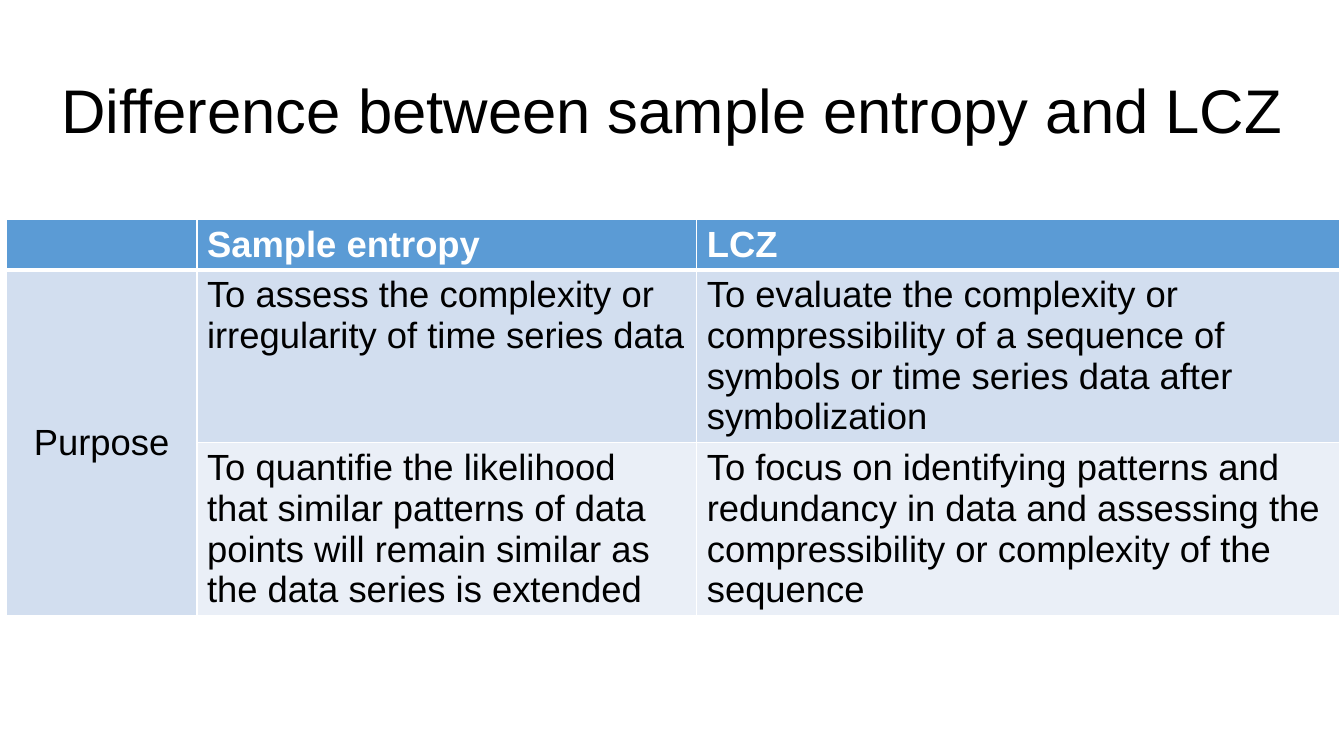
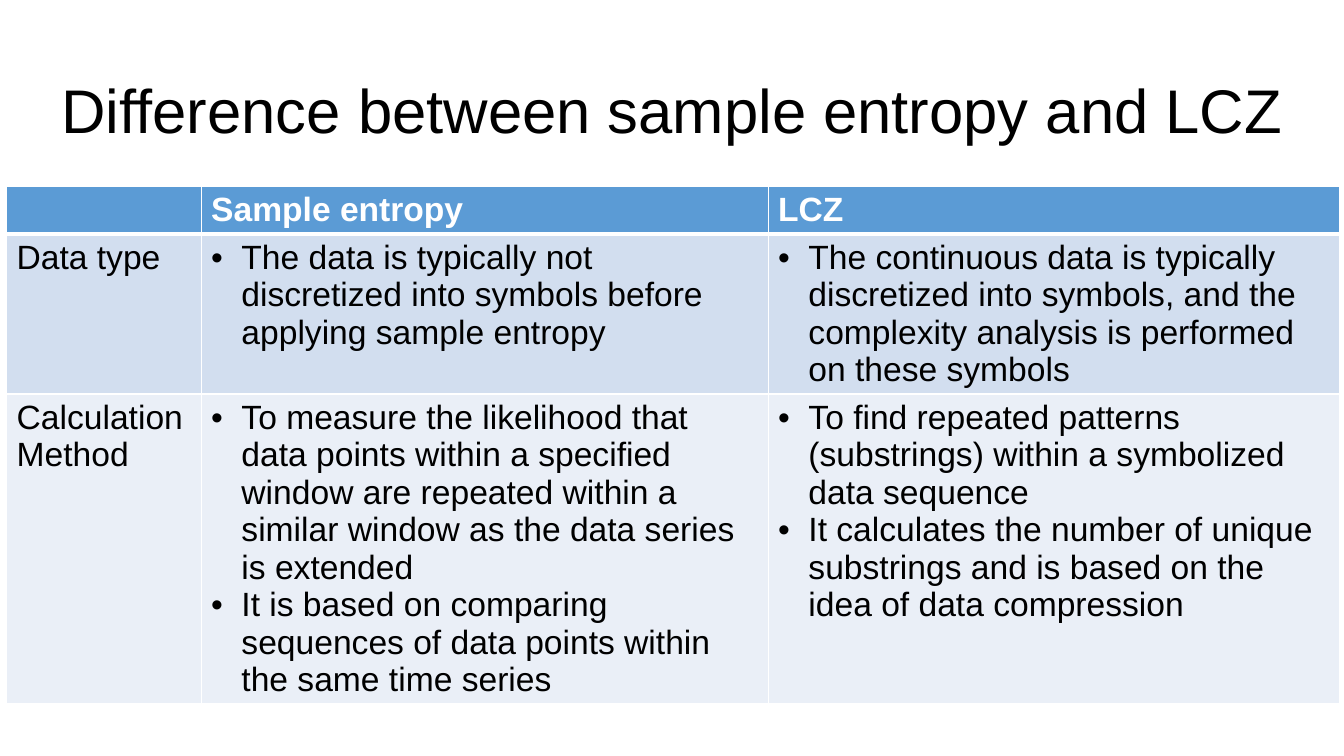
import lxml.etree
import pptx
import pptx.dml.color
import pptx.enum.text
import pptx.oxml.ns
import pptx.util

Pt = pptx.util.Pt
RGB = pptx.dml.color.RGBColor
ANCHOR = pptx.enum.text.MSO_ANCHOR
ALIGN = pptx.enum.text.PP_ALIGN
qn = pptx.oxml.ns.qn

COLORS = {
    "header": "5B9BD5",
    "odd_row": "D2DEEF",
    "even_row": "EAEFF7",
    "light": "FFFFFF",
    "ink": "000000",
}
FONT = "Arial"
TITLE = "Difference between sample entropy and LCZ"
HEADINGS = [[""], ["Sample entropy"], ["LCZ"]]
TABLE_LEFT = 4.7
BULLET_INDENT = 21.6

PURPOSE = [
    HEADINGS,
    [
        ["Purpose"],
        ["To assess the complexity or irregularity of time series data"],
        ["To evaluate the complexity or compressibility of a sequence of symbols "
         "or time series data after symbolization"],
    ],
    [
        [""],
        ["To quantifie the likelihood that similar patterns of data points will "
         "remain similar as the data series is extended"],
        ["To focus on identifying patterns and redundancy in data and assessing "
         "the compressibility or complexity of the sequence"],
    ],
]

METHOD = [
    HEADINGS,
    [
        ["Data type"],
        ["The data is typically not discretized into symbols before applying "
         "sample entropy"],
        ["The continuous data is typically discretized into symbols, and the "
         "complexity analysis is performed on these symbols"],
    ],
    [
        ["Calculation Method"],
        ["To measure the likelihood that data points within a specified window "
         "are repeated within a similar window as the data series is extended",
         "It is based on comparing sequences of data points within the same "
         "time series"],
        ["To find repeated patterns (substrings) within a symbolized data sequence",
         "It calculates the number of unique substrings and is based on the idea "
         "of data compression"],
    ],
]


def add_run(paragraph, text, size, color, bold=False):
    """Append one formatted run to a paragraph."""
    run = paragraph.add_run()
    run.text = text
    run.font.name = FONT
    run.font.size = Pt(size)
    run.font.bold = bold
    run.font.color.rgb = RGB.from_string(COLORS[color])


def add_bullet(paragraph):
    """Give a paragraph a round bullet with a hanging indent."""
    properties = paragraph._p.get_or_add_pPr()
    properties.set("marL", str(Pt(BULLET_INDENT)))
    properties.set("indent", str(-Pt(BULLET_INDENT)))
    lxml.etree.SubElement(properties, qn("a:buFont")).set("typeface", FONT)
    lxml.etree.SubElement(properties, qn("a:buChar")).set("char", "•")


def set_borders(cell, top, bottom):
    """Draw white cell borders with the given top and bottom widths."""
    properties = cell._tc.get_or_add_tcPr()
    for side, width in (("L", 1), ("R", 1), ("T", top), ("B", bottom)):
        line = lxml.etree.SubElement(properties, qn(f"a:ln{side}"), w=str(Pt(width)))
        fill = lxml.etree.SubElement(line, qn("a:solidFill"))
        lxml.etree.SubElement(fill, qn("a:srgbClr"), val=COLORS["light"])


def fill_cell(cell, texts, row, size, bulleted):
    """Style a cell by its row and write its paragraphs."""
    set_borders(cell, 3 if row == 1 else 1, 3 if row == 0 else 1)
    cell.fill.solid()
    cell.fill.fore_color.rgb = RGB.from_string(
        COLORS[("header", "odd_row", "even_row")[row]])
    frame = cell.text_frame
    for index, text in enumerate(filter(None, texts)):
        paragraph = frame.add_paragraph() if index else frame.paragraphs[0]
        if bulleted:
            add_bullet(paragraph)
        add_run(paragraph, text, size, "ink" if row else "light", bold=row == 0)


def add_comparison(slide, rows, top, widths, heights, size, bulleted=False):
    """Add a comparison table and return it."""
    table = slide.shapes.add_table(
        len(rows), len(widths), Pt(TABLE_LEFT), Pt(top),
        Pt(sum(widths)), Pt(sum(heights))).table
    table.horz_banding = False
    for column, width in zip(table.columns, widths):
        column.width = Pt(width)
    for table_row, height in zip(table.rows, heights):
        table_row.height = Pt(height)
    for row, row_texts in enumerate(rows):
        for column, texts in enumerate(row_texts):
            fill_cell(table.cell(row, column), texts, row, size,
                      bulleted and row > 0 and column > 0)
    return table


def span_label(table):
    """Merge the label over both body rows and centre it."""
    label = table.cell(1, 0)
    label.merge(table.cell(2, 0))
    label.vertical_anchor = ANCHOR.MIDDLE
    label.text_frame.paragraphs[0].alignment = ALIGN.CENTER


def place_layout_title(layout):
    """Set the title area that all slides inherit."""
    title = layout.placeholders[0]
    title.left, title.top = Pt(36.7), Pt(28.8)
    title.width, title.height = Pt(906.5), Pt(104.4)


def add_titled_slide(deck, layout):
    """Add a slide carrying the shared title."""
    slide = deck.slides.add_slide(layout)
    frame = slide.shapes.title.text_frame
    frame.auto_size = pptx.enum.text.MSO_AUTO_SIZE.NONE
    frame.vertical_anchor = ANCHOR.MIDDLE
    heading = frame.paragraphs[0]
    heading.alignment = ALIGN.LEFT
    heading.line_spacing = 0.9
    add_run(heading, TITLE, 44, "ink")
    return slide


def main():
    """Build and save the deck."""
    deck = pptx.Presentation()
    deck.slide_width, deck.slide_height = Pt(960), Pt(540)
    layout = deck.slide_layouts[5]
    place_layout_title(layout)

    purpose = add_comparison(add_titled_slide(deck, layout), PURPOSE, 156.5,
                             (136, 357, 459), (30, 30, 30), 26)
    span_label(purpose)
    add_comparison(add_titled_slide(deck, layout), METHOD, 133.2,
                   (139, 405, 408), (31, 106, 206), 24, bulleted=True)
    deck.save("out.pptx")


if __name__ == "__main__":
    main()
